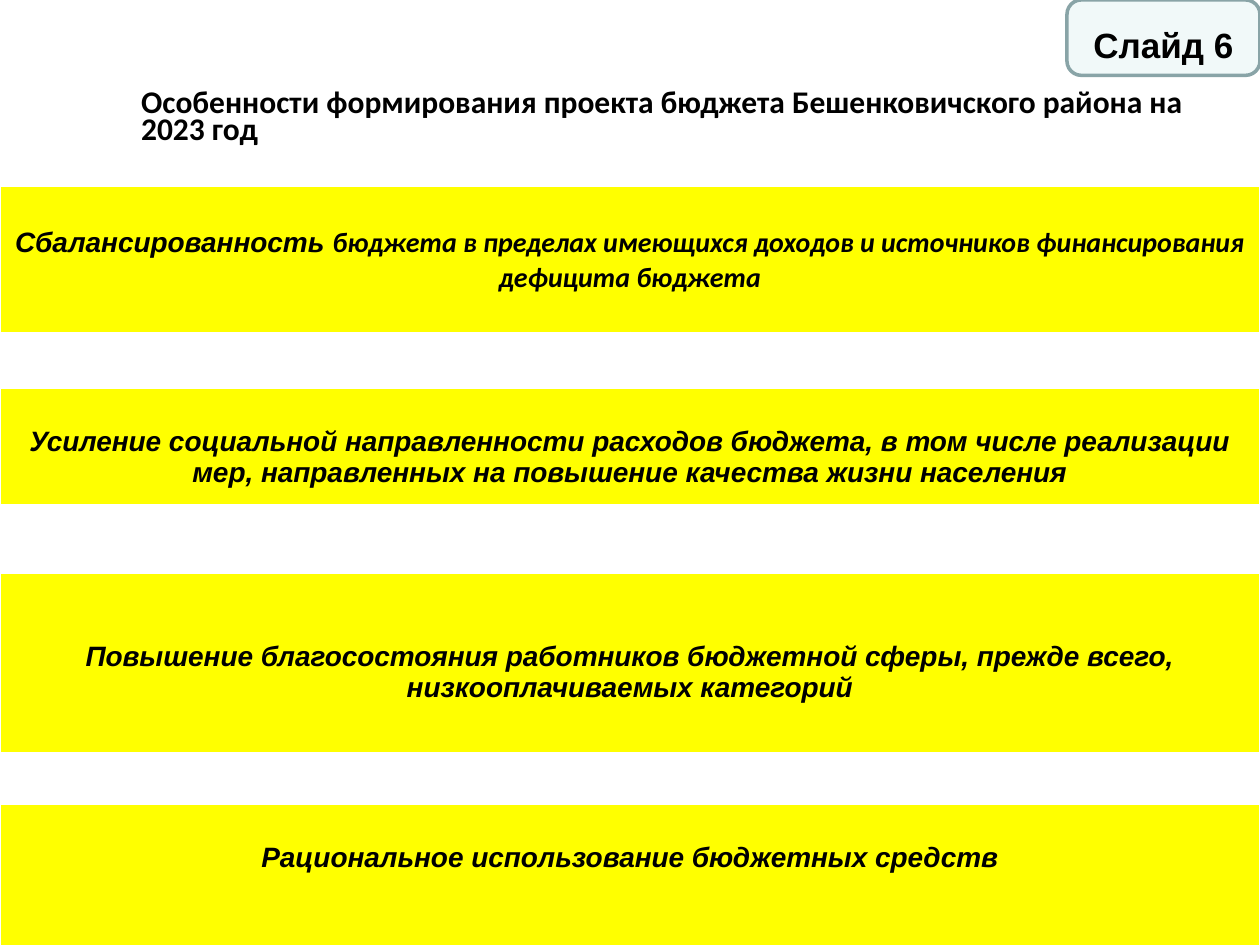
import pptx
import pptx.dml.color
import pptx.enum.shapes
import pptx.enum.text
import pptx.oxml
import pptx.oxml.ns
import pptx.util

Cm = pptx.util.Cm
Pt = pptx.util.Pt
RGBColor = pptx.dml.color.RGBColor
ALIGN = pptx.enum.text.PP_ALIGN
MIDDLE = pptx.enum.text.MSO_ANCHOR.MIDDLE

BLACK = RGBColor(0x00, 0x00, 0x00)
WHITE = RGBColor(0xFF, 0xFF, 0xFF)
YELLOW = RGBColor(0xFF, 0xFF, 0x00)
BADGE_FILL = RGBColor(0xF1, 0xF9, 0xF9)
BADGE_LINE = RGBColor(0x89, 0xA4, 0xA7)

TITLE = "Особенности формирования проекта бюджета Бешенковичского района на 2023 год"

# Each row: height, space above the text, spans as (text, font); both in cm
ROWS = [
    (2.97, 0.8, [
        ("Сбалансированность ", "Arial"),
        ("бюджета в пределах имеющихся доходов и источников "
         "финансирования дефицита бюджета", "Calibri")]),
    (1.09, 0, []),
    (2.36, 0.78, [
        ("Усиление социальной направленности расходов бюджета, в том числе реализации "
         "мер, направленных на повышение качества жизни населения", "Arial")]),
    (1.37, 0, []),
    (3.63, 1.38, [
        ("Повышение благосостояния работников бюджетной сферы, прежде всего, "
         "низкооплачиваемых категорий", "Arial")]),
    (1.04, 0, []),
    (3.02, 0.76, [("Рациональное использование бюджетных средств", "Arial")]),
]


def set_all(target, values):
    for name, value in values.items():
        setattr(target, name, value)


class SlideBuilder:
    def __init__(self, page, width):
        self.page = page
        self.width = width
        self.text_format = {"bold": True, "size": Pt(16)}

    def add_spans(self, para, spans, align, **changes):
        para.alignment = align
        for text, font in spans:
            span = para.add_run()
            span.text = text
            set_all(span.font, {**self.text_format, "name": font, **changes})
            span.font.color.rgb = BLACK

    def title(self, text):
        box = self.page.shapes.title
        set_all(box, {"left": Cm(2.59), "top": Cm(1.65),
                      "width": Cm(21.59), "height": Cm(1.52)})
        set_all(box.text_frame, {"word_wrap": True, "vertical_anchor": MIDDLE,
                                 "auto_size": pptx.enum.text.MSO_AUTO_SIZE.NONE})
        para = box.text_frame.paragraphs[0]
        para.line_spacing = Pt(15.5)
        self.add_spans(para, [(text, "Calibri")], ALIGN.LEFT, size=Pt(18))

    def border(self, cell, side, points):
        properties = cell._tc.get_or_add_tcPr()
        line = pptx.oxml.parse_xml(
            f'<a:{side} {pptx.oxml.ns.nsdecls("a")} w="{Pt(points)}">'
            f'<a:solidFill><a:srgbClr val="{WHITE}"/></a:solidFill></a:{side}>')
        properties.append(line)

    def cell(self, cell, fill, bottom_line):
        # Borders must precede the fill in the cell properties
        for side in ("lnL", "lnR", "lnT"):
            self.border(cell, side, 1)
        self.border(cell, "lnB", bottom_line)
        cell.fill.solid()
        cell.fill.fore_color.rgb = fill

    def feature_table(self, rows):
        total = Cm(sum(height for height, _, _ in rows))
        table = self.page.shapes.add_table(
            len(rows), 2, 0, Cm(3.76), self.width, total).table
        set_all(table, {"first_row": False, "horz_banding": False})
        for index, (height, space, spans) in enumerate(rows):
            table.rows[index].height = Cm(height)
            first, second = table.cell(index, 0), table.cell(index, 1)
            for cell in (first, second):
                self.cell(cell, YELLOW if spans else WHITE, 3 if index == 0 else 1)
                set_all(cell, {"margin_top": Cm(space), "margin_bottom": 0})
            if index != 1:
                first.merge(second)
            self.add_spans(first.text_frame.paragraphs[0], spans, ALIGN.CENTER,
                           italic=True)

    def badge(self, text):
        width = Cm(3.89)
        shape = self.page.shapes.add_shape(
            pptx.enum.shapes.MSO_SHAPE.ROUNDED_RECTANGLE,
            self.width - width, 0, width, Cm(1.52))
        shape.adjustments[0] = 0.19
        shape.shadow.inherit = False
        shape.fill.solid()
        shape.fill.fore_color.rgb = BADGE_FILL
        shape.line.color.rgb = BADGE_LINE
        shape.line.width = Pt(2)
        set_all(shape.text_frame, {"word_wrap": True, "vertical_anchor": MIDDLE,
                                   "margin_top": Cm(0.28), "margin_bottom": 0})
        self.add_spans(shape.text_frame.paragraphs[0], [(text, "Arial")],
                       ALIGN.CENTER, size=Pt(20))


def main():
    deck = pptx.Presentation()
    set_all(deck, {"slide_width": Cm(25.4), "slide_height": Cm(19.05)})
    page = deck.slides.add_slide(deck.slide_layouts.get_by_name("Title Only"))
    builder = SlideBuilder(page, deck.slide_width)
    builder.title(TITLE)
    builder.feature_table(ROWS)
    builder.badge("Слайд 6")
    deck.save("out.pptx")


if __name__ == "__main__":
    main()
